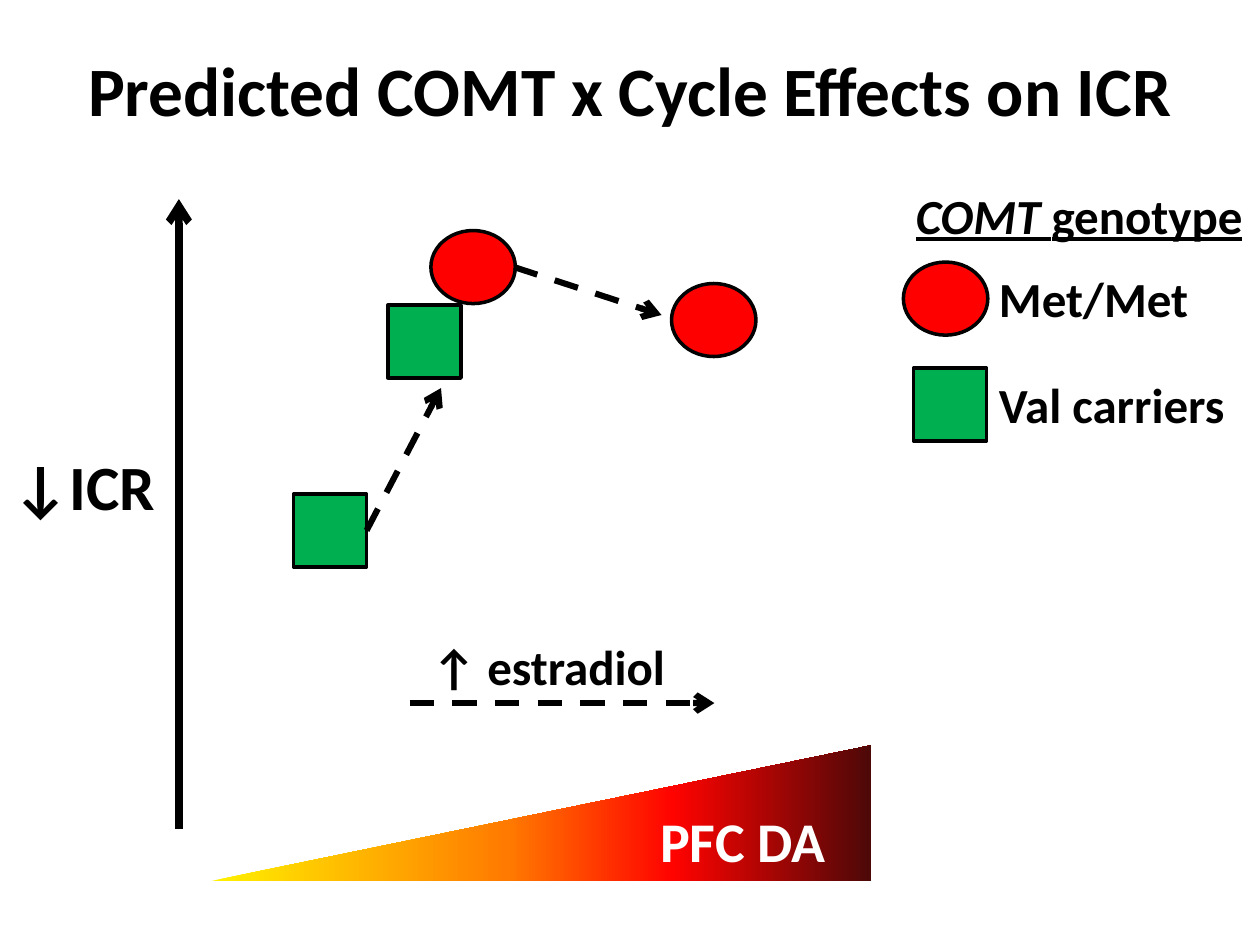
from dataclasses import dataclass
from lxml.etree import SubElement
from pptx import Presentation
from pptx.dml.color import RGBColor
from pptx.enum.dml import MSO_LINE
from pptx.enum.shapes import MSO_CONNECTOR, MSO_SHAPE as Shape
from pptx.enum.text import MSO_ANCHOR as Anchor, MSO_AUTO_SIZE as AutoSize, PP_ALIGN as Align
from pptx.oxml import parse_xml
from pptx.oxml.ns import nsdecls, qn
from pptx.util import Inches, Pt


@dataclass(frozen=True)
class Theme:
    font: str = "Calibri"
    ink: str = "000000"
    paper: str = "FFFFFF"
    met: str = "FF0000"
    val: str = "00B050"
    dopamine: tuple = ((0, "FFF200"), (45, "FF7A00"), (70, "FF0300"), (100, "4D0808"))
    title: float = 39.6
    axis: float = 36
    wedge: float = 32
    label: float = 28
    outline: float = 2
    axis_line: float = 4.25
    trend_line: float = 3.5


class Diagram:
    def __init__(self, slide, theme):
        self.shapes = slide.shapes
        self.theme = theme

    def text(self, words, left, top, width, height, size, color=None):
        box = self.shapes.add_textbox(*map(Inches, (left, top, width, height)))
        frame = box.text_frame
        frame.word_wrap = False
        frame.auto_size = AutoSize.SHAPE_TO_FIT_TEXT
        paragraph = frame.paragraphs[0]
        paragraph.text = words
        font = paragraph.font
        font.name, font.size, font.bold = self.theme.font, Pt(size), True
        font.color.rgb = RGBColor.from_string(color or self.theme.ink)
        return frame

    def title(self, words):
        frame = self.text(words, 0.5, 0.08, 9, 1.25, self.theme.title)
        frame.auto_size = AutoSize.NONE
        frame.word_wrap = True
        frame.vertical_anchor = Anchor.MIDDLE
        frame.paragraphs[0].alignment = Align.CENTER

    def marker(self, kind, left, top, width, color):
        marker = self.shapes.add_shape(kind, *map(Inches, (left, top, width, 0.58)))
        marker.shadow.inherit = False
        marker.fill.solid()
        marker.fill.fore_color.rgb = RGBColor.from_string(color)
        marker.line.color.rgb = RGBColor.from_string(self.theme.ink)
        marker.line.width = Pt(self.theme.outline)
        return marker

    def met(self, left, top):
        return self.marker(Shape.OVAL, left, top, 0.67, self.theme.met)

    def val(self, left, top):
        return self.marker(Shape.RECTANGLE, left, top, 0.58, self.theme.val)

    def arrow(self, start, end, width, dashed=True):
        arrow = self.shapes.add_connector(MSO_CONNECTOR.STRAIGHT, *map(Inches, start + end))
        arrow.line.color.rgb = RGBColor.from_string(self.theme.ink)
        arrow.line.width = Pt(width)
        if dashed:
            arrow.line.dash_style = MSO_LINE.DASH
        properties = arrow.element.spPr
        SubElement(properties.find(qn("a:ln")), qn("a:tailEnd"), type="arrow")
        SubElement(properties, qn("a:effectLst"))
        return arrow

    def wedge(self, left, top, width, height):
        wedge = self.shapes.add_shape(Shape.RIGHT_TRIANGLE, *map(Inches, (left, top, width, height)))
        wedge.rotation = 270
        wedge.shadow.inherit = False
        wedge.line.fill.background()
        stops = "".join(
            f'<a:gs pos="{percent * 1000}"><a:srgbClr val="{color}"/></a:gs>'
            for percent, color in self.theme.dopamine
        )
        gradient = parse_xml(
            f'<a:gradFill {nsdecls("a")} rotWithShape="1"><a:gsLst>{stops}</a:gsLst>'
            '<a:lin ang="5400000" scaled="0"/></a:gradFill>'
        )
        wedge.element.spPr.find(qn("a:prstGeom")).addnext(gradient)


def main():
    deck = Presentation()
    deck.slide_width, deck.slide_height = Inches(10), Inches(7.5)
    theme = Theme()
    diagram = Diagram(deck.slides.add_slide(deck.slide_layouts[6]), theme)

    diagram.title("Predicted COMT x Cycle Effects on ICR")

    diagram.wedge(3.75, 3.83, 1.08, 5.25)
    diagram.text("PFC DA", 5.14, 6.35, 1.53, 0.64, theme.wedge, theme.paper)
    diagram.arrow((1.42, 6.58), (1.42, 1.58), theme.axis_line, dashed=False)
    diagram.text("↓ICR", 0, 3.5, 1.34, 0.71, theme.axis)

    legend = diagram.text("", 7.17, 1.42, 2.82, 0.57, theme.label).paragraphs[0]
    legend.font.underline = True
    gene = legend.add_run()
    gene.text = "COMT "
    gene.font.italic = True
    legend.add_run().text = "genotype"
    diagram.met(7.17, 2.08)
    diagram.text("Met/Met", 7.83, 2.08, 1.72, 0.57, theme.label)
    diagram.val(7.25, 2.92)
    diagram.text("Val carriers", 7.83, 2.92, 2.02, 0.57, theme.label)

    val_start = diagram.val(2.33, 3.92)
    diagram.met(3.42, 1.83)
    val_trend = diagram.arrow((2.92, 4.21), (3.5, 3.08), theme.trend_line)
    val_trend.begin_connect(val_start, 3)
    diagram.arrow((4.08, 2.12), (5.25, 2.5), theme.trend_line)
    diagram.val(3.08, 2.42)
    diagram.met(5.33, 2.25)

    diagram.arrow((3.25, 5.58), (5.67, 5.58), theme.trend_line)
    diagram.text("↑ estradiol", 3.33, 5, 2.07, 0.57, theme.label)

    deck.save("out.pptx")


if __name__ == "__main__":
    main()
